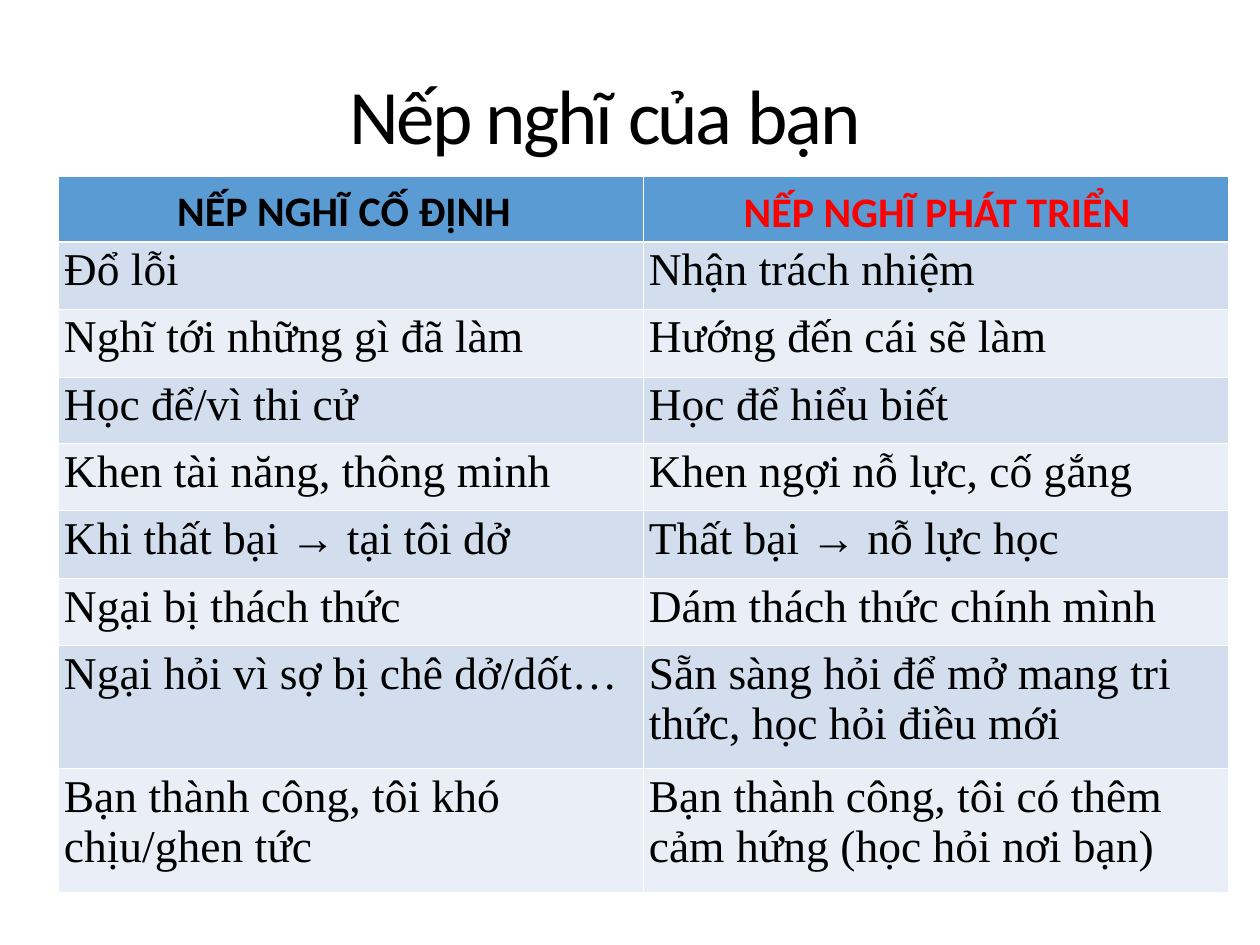
from dataclasses import dataclass

import lxml.etree
import pptx
import pptx.dml.color
import pptx.enum.text
import pptx.oxml.ns
import pptx.util

RGBColor = pptx.dml.color.RGBColor
BLACK = RGBColor(0x00, 0x00, 0x00)
WHITE = RGBColor(0xFF, 0xFF, 0xFF)
RED = RGBColor(0xFF, 0x00, 0x00)
HEADER_BLUE = RGBColor(0x5B, 0x9B, 0xD4)
DARK_BAND = RGBColor(0xD2, 0xDE, 0xEE)
LIGHT_BAND = RGBColor(0xEA, 0xEE, 0xF7)

EMU_PER_PX = 914400 // 126
CENTER = pptx.enum.text.PP_ALIGN.CENTER
GROW = pptx.enum.text.MSO_AUTO_SIZE.SHAPE_TO_FIT_TEXT
MIDDLE = pptx.enum.text.MSO_ANCHOR.MIDDLE


@dataclass(frozen=True)
class Heading:
    text: str
    left: int
    top: int
    color: RGBColor


@dataclass(frozen=True)
class Contrast:
    fixed: str
    growth: str
    height: int


TITLE_SPANS = [("Nếp nghĩ ", -140), ("của ", -160), ("bạn", -120)]
HEADINGS = [
    Heading("NẾP NGHĨ CỐ ĐỊNH", 58, 178, BLACK),
    Heading("NẾP NGHĨ PHÁT TRIỂN", 651, 179, RED),
]
CONTRASTS = [
    Contrast("", "", 66),
    Contrast("Đổ lỗi", "Nhận trách nhiệm", 67),
    Contrast("Nghĩ tới những gì đã làm", "Hướng đến cái sẽ làm", 68),
    Contrast("Học để/vì thi cử", "Học để hiểu biết", 67),
    Contrast("Khen tài năng, thông minh", "Khen ngợi nỗ lực, cố gắng", 67),
    Contrast("Khi thất bại → tại tôi dở", "Thất bại → nỗ lực học", 68),
    Contrast("Ngại bị thách thức", "Dám thách thức chính mình", 67),
    Contrast(
        "Ngại hỏi vì sợ bị chê dở/dốt…",
        "Sẵn sàng hỏi để mở mang tri\nthức, học hỏi điều mới",
        123,
    ),
    Contrast(
        "Bạn thành công, tôi khó\nchịu/ghen tức",
        "Bạn thành công, tôi có thêm\ncảm hứng (học hỏi nơi bạn)",
        123,
    ),
]
COLUMN_WIDTH = 585


def px(length: int) -> pptx.util.Emu:
    return pptx.util.Emu(length * EMU_PER_PX)


def apply(target, values: dict) -> None:
    for name, value in values.items():
        setattr(target, name, value)


def format_font(span, name: str, size: int, color: RGBColor, bold: bool = False) -> None:
    apply(span.font, {"name": name, "size": pptx.util.Pt(size), "bold": bold})
    span.font.color.rgb = color


def place(box, left: int, top: int, width: int, height: int) -> None:
    apply(box, {"left": px(left), "top": px(top), "width": px(width), "height": px(height)})


def draw_title(page) -> None:
    title = page.shapes.title
    place(title, 244, 66, 722, 94)
    margins = {"margin_left": 0, "margin_right": 0, "margin_top": px(1), "margin_bottom": 0}
    apply(title.text_frame, margins | {"vertical_anchor": MIDDLE, "auto_size": GROW})
    para = title.text_frame.paragraphs[0]
    apply(para, {"alignment": CENTER, "space_before": pptx.util.Pt(0.9)})
    for text, spacing in TITLE_SPANS:
        span = para.add_run()
        span.text = text
        format_font(span, "Calibri", 44, BLACK)
        span.font._element.set("spc", str(spacing))


def draw_borders(cell, widths: dict[str, float]) -> None:
    properties = cell._tc.get_or_add_tcPr()
    for index, (side, width) in enumerate(widths.items()):
        line = lxml.etree.Element(
            pptx.oxml.ns.qn(f"a:ln{side}"), w=str(pptx.util.Pt(width))
        )
        fill = lxml.etree.SubElement(line, pptx.oxml.ns.qn("a:solidFill"))
        lxml.etree.SubElement(fill, pptx.oxml.ns.qn("a:srgbClr"), val=str(WHITE))
        properties.insert(index, line)


def border_widths(row: int, column: int) -> dict[str, float]:
    last = len(CONTRASTS) - 1
    return {
        "L": 0.5 if column else 0.25,
        "R": 0.25 if column else 0.5,
        "T": {0: 0.25, 1: 1.5}.get(row, 0.5),
        "B": {0: 1.5, last: 0.25}.get(row, 0.5),
    }


def band_color(row: int) -> RGBColor:
    if row == 0:
        return HEADER_BLUE
    return DARK_BAND if row % 2 else LIGHT_BAND


def fill_cell(cell, text: str, color: RGBColor) -> None:
    cell.fill.solid()
    cell.fill.fore_color.rgb = color
    margins = {"margin_left": px(6), "margin_right": 0, "margin_top": px(3), "margin_bottom": 0}
    apply(cell, margins)
    if not text:
        return
    cell.text_frame.text = text
    cell.text_frame.paragraphs[0].space_before = pptx.util.Pt(0.9)
    for para in cell.text_frame.paragraphs:
        for span in para.runs:
            format_font(span, "Times New Roman", 26, BLACK)


def draw_table(page) -> None:
    height = sum(contrast.height for contrast in CONTRASTS)
    frame = page.shapes.add_table(
        len(CONTRASTS), 2, px(58), px(176), px(2 * COLUMN_WIDTH), px(height)
    )
    table = frame.table
    for column in table.columns:
        column.width = px(COLUMN_WIDTH)
    for row, contrast in enumerate(CONTRASTS):
        table.rows[row].height = px(contrast.height)
        for column, text in enumerate((contrast.fixed, contrast.growth)):
            cell = table.cell(row, column)
            fill_cell(cell, text, band_color(row))
            draw_borders(cell, border_widths(row, column))


def draw_heading(page, heading: Heading) -> None:
    box = page.shapes.add_textbox(px(heading.left), px(heading.top), px(572), px(63))
    apply(box.text_frame, {"word_wrap": True, "auto_size": GROW})
    para = box.text_frame.paragraphs[0]
    para.alignment = CENTER
    span = para.add_run()
    span.text = heading.text
    format_font(span, "Calibri", 24, heading.color, bold=True)


def main() -> None:
    deck = pptx.Presentation()
    apply(deck, {"slide_width": px(1260), "slide_height": px(945)})
    page = deck.slides.add_slide(deck.slide_layouts[5])
    draw_title(page)
    draw_table(page)
    for heading in HEADINGS:
        draw_heading(page, heading)
    deck.save("out.pptx")


if __name__ == "__main__":
    main()
